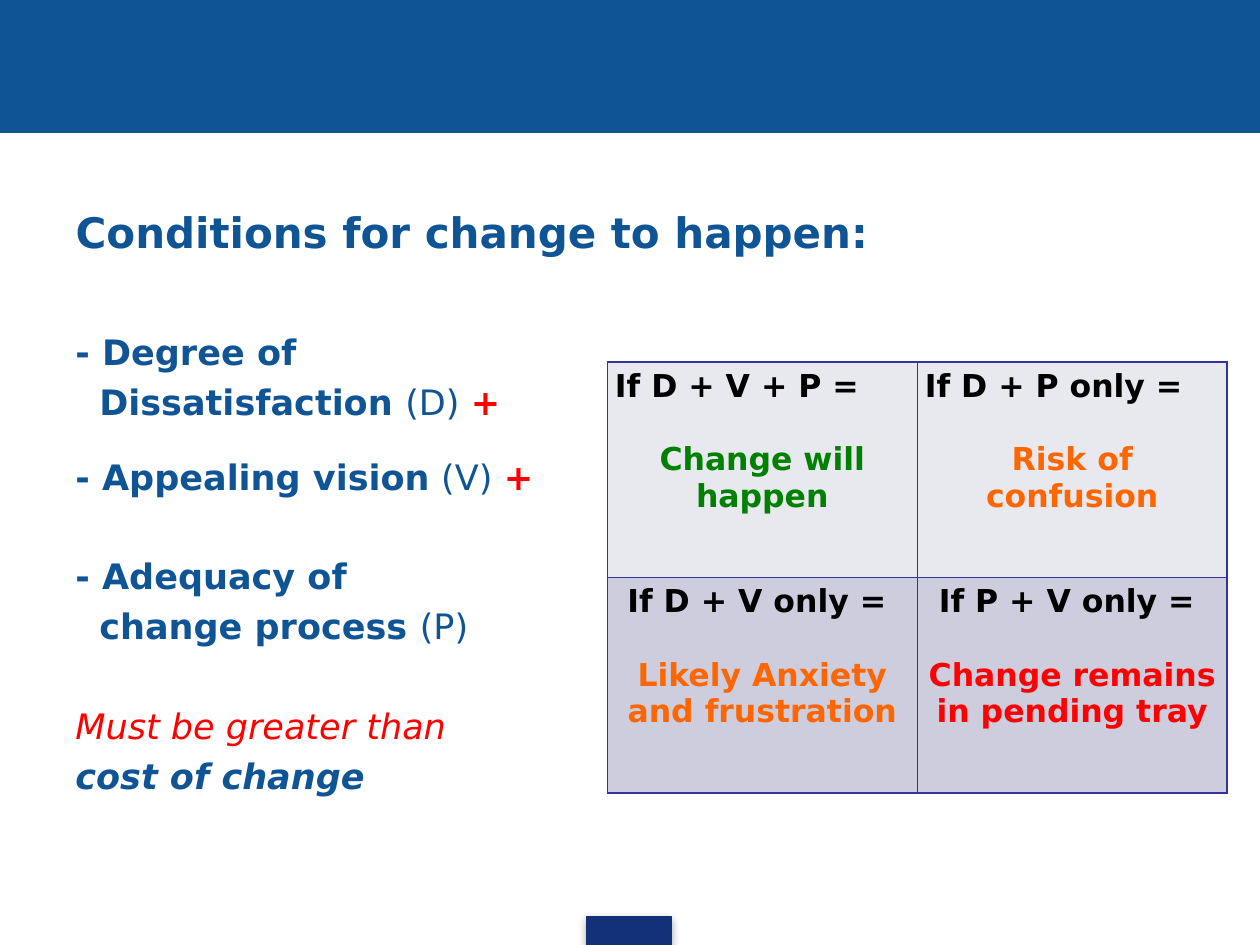
from dataclasses import dataclass

from lxml import etree
from pptx import Presentation
from pptx import util as u
from pptx.dml.color import RGBColor
from pptx.enum import shapes, text
from pptx.oxml import parse_xml
from pptx.oxml.ns import qn

WIDTH, HEIGHT = 10, 7.5
FONT = "DejaVu Sans"
BLUE, NAVY, RED, ORANGE, GREEN, BLACK = (
    "0F5494", "133176", "FF0000", "FF6600", "008000", "000000")
BORDER = "333399"
ROW_FILLS = ("E8E8EF", "CDCDDE")
NS = 'xmlns:a="http://schemas.openxmlformats.org/drawingml/2006/main"'
LINE_GAP = 4.7  # points, 20% of a 20 pt line
LEFT, CENTER = text.PP_ALIGN.LEFT, text.PP_ALIGN.CENTER


@dataclass
class Run:
    text: str
    color: str = BLUE
    bold: bool = True
    italic: bool = False


@dataclass
class Line:
    runs: list[Run]
    before: float = LINE_GAP
    indent: float = 0


@dataclass
class Outcome:
    condition: str
    result: str
    color: str
    align: text.PP_ALIGN = CENTER


@dataclass
class Box:
    """Left, top, width and height as shares of the slide."""
    left: float
    top: float
    width: float
    height: float

    def emu(self) -> tuple:
        return (u.Inches(self.left * WIDTH), u.Inches(self.top * HEIGHT),
                u.Inches(self.width * WIDTH), u.Inches(self.height * HEIGHT))


def rgb(color: str) -> RGBColor:
    return RGBColor.from_string(color)


def add_run(p, run: Run, size: float) -> None:
    r = p.add_run()
    r.text = run.text
    f = r.font
    f.name, f.size, f.bold, f.italic = FONT, u.Pt(size), run.bold, run.italic
    f.color.rgb = rgb(run.color)


def add_bar(slide, box: Box, color: str):
    sp = slide.shapes.add_shape(shapes.MSO_SHAPE.RECTANGLE, *box.emu())
    sp.shadow.inherit = False
    sp.fill.solid()
    sp.fill.fore_color.rgb = rgb(color)
    sp.line.color.rgb = rgb(color)
    sp.line.width = u.Pt(0.75)
    return sp


def add_soft_shadow(sp) -> None:
    effects = sp._element.spPr.find(qn("a:effectLst"))
    effects.append(parse_xml(
        f'<a:outerShdw {NS} blurRad="{u.Pt(5)}" dist="{u.Pt(1.8)}" dir="5400000" '
        'rotWithShape="0"><a:srgbClr val="000000"><a:alpha val="35000"/>'
        '</a:srgbClr></a:outerShdw>'))


def set_title(slide, box: Box, run: Run) -> None:
    sp = slide.shapes.title
    sp.left, sp.top, sp.width, sp.height = box.emu()
    tf = sp.text_frame
    tf.word_wrap = True
    tf.vertical_anchor = text.MSO_ANCHOR.BOTTOM
    p = tf.paragraphs[0]
    p.alignment = LEFT
    add_run(p, run, 24)


def add_lines(slide, box: Box, lines: list[Line]) -> None:
    tf = slide.shapes.add_textbox(*box.emu()).text_frame
    tf.word_wrap = True
    for i, line in enumerate(lines):
        p = tf.add_paragraph() if i else tf.paragraphs[0]
        p._p.get_or_add_pPr().set("marL", str(u.Inches(line.indent)))
        p.space_before = u.Pt(line.before if i else 0)
        for run in line.runs:
            add_run(p, run, 20)


def set_borders(cell) -> None:
    tc_pr = cell._tc.get_or_add_tcPr()
    for i, side in enumerate(("lnL", "lnR", "lnT", "lnB")):
        ln = etree.fromstring(
            f'<a:{side} {NS} w="{u.Pt(1)}"><a:solidFill>'
            f'<a:srgbClr val="{BORDER}"/></a:solidFill></a:{side}>')
        tc_pr.insert(i, ln)


def fill_cell(cell, outcome: Outcome, fill: str) -> None:
    cell.fill.solid()
    cell.fill.fore_color.rgb = rgb(fill)
    set_borders(cell)
    cell.margin_left = cell.margin_right = u.Inches(0.06)
    cell.margin_top = cell.margin_bottom = u.Inches(0.05)
    tf = cell.text_frame
    p = tf.paragraphs[0]
    p.alignment = outcome.align
    add_run(p, Run(outcome.condition, BLACK), 18)
    p = tf.add_paragraph()
    p.alignment = CENTER
    p.space_before = u.Pt(21)
    add_run(p, Run(outcome.result, outcome.color), 18)


def add_outcomes(slide, box: Box, grid: list[list[Outcome]]) -> None:
    table = slide.shapes.add_table(len(grid), len(grid[0]), *box.emu()).table
    for r, row in enumerate(grid):
        for c, outcome in enumerate(row):
            fill_cell(table.cell(r, c), outcome, ROW_FILLS[r])


def main() -> None:
    prs = Presentation()
    prs.slide_width, prs.slide_height = u.Inches(WIDTH), u.Inches(HEIGHT)
    slide = prs.slides.add_slide(prs.slide_layouts[5])

    # Header band and footer tab
    add_bar(slide, Box(0, 0, 1, 0.14), BLUE)
    add_soft_shadow(add_bar(slide, Box(0.466, 0.97, 0.067, 0.03), NAVY))

    # Title
    set_title(slide, Box(0.05, 0.156, 0.809, 0.123),
              Run("Conditions for change to happen:"))

    # Outcome table
    add_outcomes(slide, Box(0.482, 0.383, 0.492, 0.456), [
        [Outcome("If D + V + P =", "Change will happen", GREEN, LEFT),
         Outcome("If D + P only =", "Risk of confusion", ORANGE, LEFT)],
        [Outcome("If D + V only = ", "Likely Anxiety and frustration", ORANGE),
         Outcome("If P + V only = ", "Change remains in pending tray", RED)],
    ])

    # Conditions on the left
    plus = Run("+", RED)
    add_lines(slide, Box(0.05, 0.343, 0.42, 0.55), [
        Line([Run("- Degree of")]),
        Line([Run("Dissatisfaction "), Run("(D) ", bold=False), plus], indent=0.19),
        Line([Run("- Appealing vision"), Run(" (V) ", bold=False), plus], 18.7),
        Line([Run("- Adequacy of")], 32.7),
        Line([Run("change process "), Run("(P)", bold=False)], indent=0.19),
        Line([Run("Must be greater than", RED, False, True)], 32.7),
        Line([Run("cost of change", italic=True)]),
    ])

    prs.save("out.pptx")


if __name__ == "__main__":
    main()
